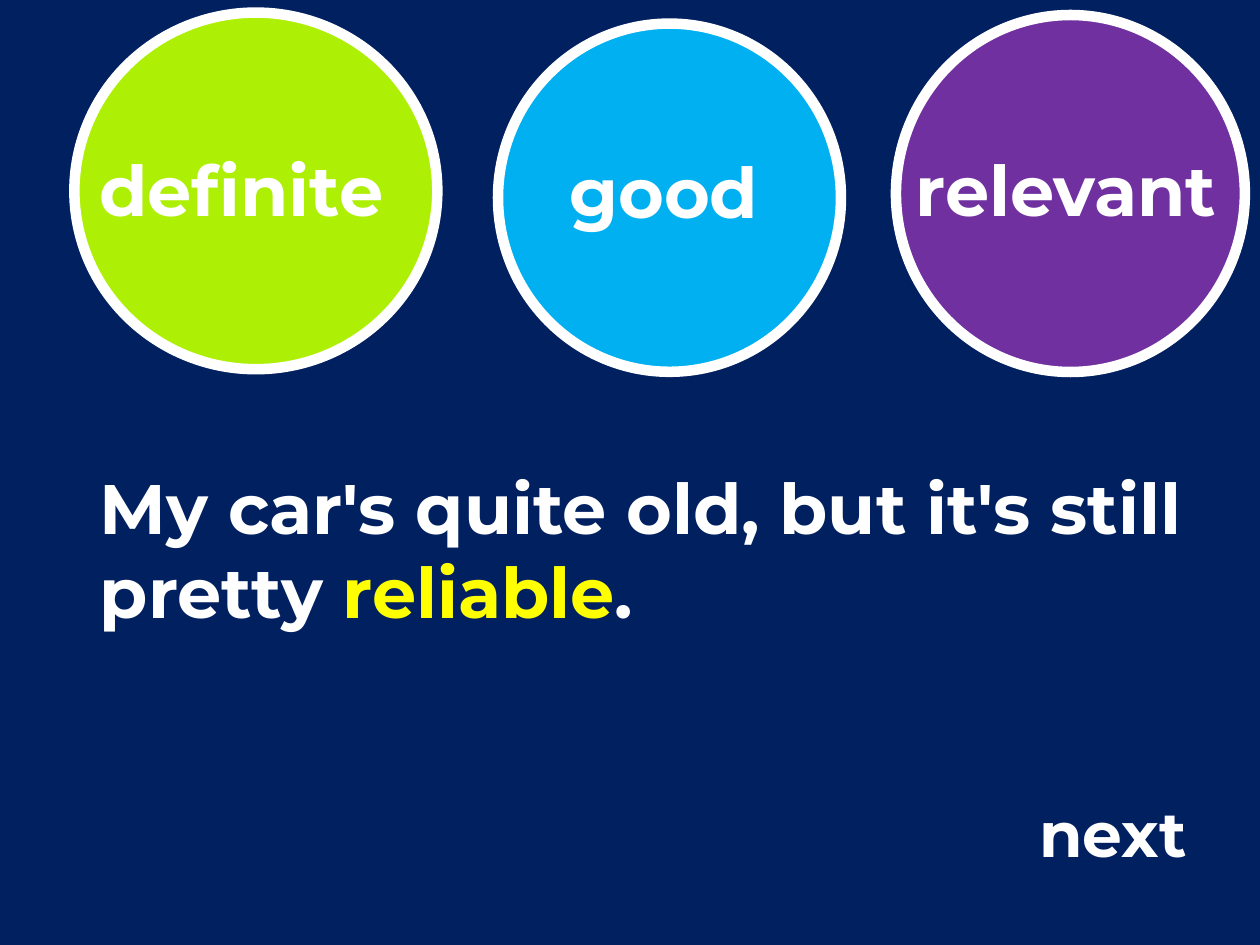
from pptx import Presentation
from pptx.dml.color import RGBColor
from pptx.enum.shapes import MSO_SHAPE
from pptx.enum.text import MSO_ANCHOR, PP_ALIGN
from pptx.util import Pt

OVAL, RECT = MSO_SHAPE.OVAL, MSO_SHAPE.RECTANGLE
TOP, LEFT, CENTER = MSO_ANCHOR.TOP, PP_ALIGN.LEFT, PP_ALIGN.CENTER

NAVY = RGBColor(0x00, 0x20, 0x60)
WHITE = RGBColor(0xFF, 0xFF, 0xFF)
YELLOW = RGBColor(0xFF, 0xFF, 0x00)
RED = RGBColor(0xFF, 0x00, 0x00)
BLUE = RGBColor(0x00, 0xB0, 0xF0)
PURPLE = RGBColor(0x70, 0x30, 0xA0)
LIME = RGBColor(0xAE, 0xF0, 0x05)


def add_form(shapes, kind, box, fill=None, line=None):
    form = shapes.add_shape(kind, *map(Pt, box))
    form.shadow.inherit = False
    if fill is None:
        form.fill.background()
    else:
        form.fill.solid()
        form.fill.fore_color.rgb = fill
    if line is None:
        form.line.fill.background()
    else:
        form.line.color.rgb = line
        form.line.width = Pt(6)
    return form


def write(shape, runs, size, align):
    """Fill the shape with one bold paragraph of (text, colour) runs."""
    frame = shape.text_frame
    frame.word_wrap = True
    frame.vertical_anchor = TOP
    para = frame.paragraphs[0]
    para.alignment = align
    for text, color in runs:
        run = para.add_run()
        run.text = text
        run.font.name = "Montserrat"
        run.font.size = Pt(size)
        run.font.bold = True
        run.font.color.rgb = color


deck = Presentation()
deck.slide_width, deck.slide_height = Pt(720), Pt(540)
slide = deck.slides.add_slide(deck.slide_layouts[6])
slide.background.fill.solid()
slide.background.fill.fore_color.rgb = NAVY

# Example sentence
quote = add_form(slide.shapes, OVAL, (-87.8, 240.5, 941, 147))
write(quote, [("My car's quite old, but it's still pretty ", WHITE),
              ("reliable", YELLOW), (".", WHITE)], 40, LEFT)

# Next button
button = add_form(slide.shapes, RECT, (586.8, 450.7, 124.6, 51))
write(button, [("next", WHITE)], 36, LEFT)

# Answer choices: word, fill, circle box, label box
choices = [
    ("good", BLUE, (284.6, 13.5, 196, 199), (284.6, 81.4, 189.4, 55.4)),
    ("relevant", PURPLE, (512, 8.6, 199.4, 204), (508.3, 80, 201.6, 55.4)),
    ("definite", LIME, (42.5, 7.2, 207.4, 203.8), (42.5, 80, 190.8, 55.4)),
]
for word, color, disc, label in choices:
    group = slide.shapes.add_group_shape()
    add_form(group.shapes, OVAL, disc, color, WHITE)
    text = group.shapes.add_textbox(*map(Pt, label))
    write(text, [(word, WHITE)], 40, CENTER)

deck.save("out.pptx")
